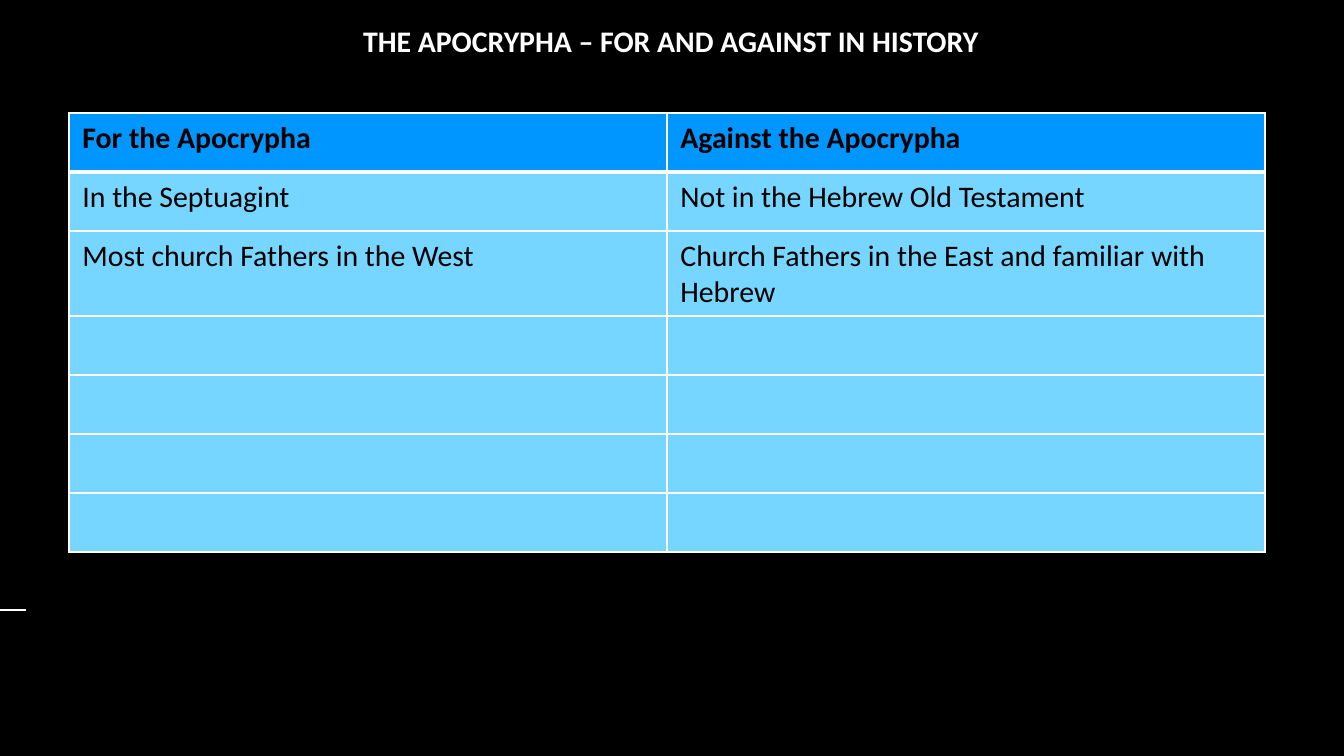
"""Build a slide with a table of historical views for and against the Apocrypha."""
from lxml import etree
from pptx import Presentation
from pptx.dml.color import RGBColor
from pptx.enum.shapes import MSO_CONNECTOR
from pptx.enum.text import PP_ALIGN
from pptx.oxml.ns import qn
from pptx.util import Pt

STRAIGHT = MSO_CONNECTOR.STRAIGHT
CENTER = PP_ALIGN.CENTER
SLIDE_WIDTH, SLIDE_HEIGHT = 1344, 756
SCALE = 9144000 / SLIDE_WIDTH
COLORS = {
    "background": "000000",
    "light": "FFFFFF",
    "dark": "000000",
    "header": "0096FF",
    "body": "76D6FF",
}
VIEWS = [
    ("For the Apocrypha", "Against the Apocrypha"),
    ("In the Septuagint", "Not in the Hebrew Old Testament"),
    ("Most church Fathers in the West",
     "Church Fathers in the East and familiar with Hebrew"),
] + [("", "")] * 4


def emu(pixels):
    return round(pixels * SCALE)


def color(name):
    return RGBColor.from_string(COLORS[name])


class SlideBuilder:
    def __init__(self, slide, font="Calibri", size=16):
        self.slide = slide
        self.font = font
        self.size = size

    def background(self, name):
        fill = self.slide.background.fill
        fill.solid()
        fill.fore_color.rgb = color(name)

    def style(self, paragraph, name, bold):
        font = paragraph.font
        font.name = self.font
        font.size = Pt(self.size)
        font.bold = bold
        font.color.rgb = color(name)

    def line(self, left, top, right, bottom, width):
        connector = self.slide.shapes.add_connector(
            STRAIGHT, *map(emu, (left, top, right, bottom)))
        connector.line.color.rgb = color("light")
        connector.line.width = Pt(width)
        etree.SubElement(connector.element.spPr, qn("a:effectLst"))

    def title(self, text, left, top, width, height):
        box = self.slide.shapes.add_textbox(*map(emu, (left, top, width, height)))
        box.text_frame.word_wrap = True
        paragraph = box.text_frame.paragraphs[0]
        paragraph.text = text
        paragraph.alignment = CENTER
        self.style(paragraph, "light", True)

    def border(self, cell, side, width):
        properties = cell._tc.get_or_add_tcPr()
        line = etree.SubElement(properties, qn(f"a:ln{side}"), w=str(Pt(width)))
        fill = etree.SubElement(line, qn("a:solidFill"))
        etree.SubElement(fill, qn("a:srgbClr"), val=COLORS["light"])

    def table(self, rows, left, top, width, row_height):
        shape = self.slide.shapes.add_table(
            len(rows), len(rows[0]),
            *map(emu, (left, top, width, row_height * len(rows))))
        for row_index, texts in enumerate(rows):
            is_header = row_index == 0
            widths = {"L": 1, "R": 1, "T": 3 if row_index == 1 else 1,
                      "B": 3 if is_header else 1}
            for column_index, text in enumerate(texts):
                cell = shape.table.cell(row_index, column_index)
                for side, line_width in widths.items():
                    self.border(cell, side, line_width)
                cell.fill.solid()
                cell.fill.fore_color.rgb = color("header" if is_header else "body")
                paragraph = cell.text_frame.paragraphs[0]
                if text:
                    paragraph.text = text
                self.style(paragraph, "dark", is_header)


def main():
    presentation = Presentation()
    presentation.slide_width = emu(SLIDE_WIDTH)
    presentation.slide_height = emu(SLIDE_HEIGHT)
    builder = SlideBuilder(presentation.slides.add_slide(presentation.slide_layouts[6]))
    builder.background("background")
    builder.line(0, 610, 26, 610, 0.75)
    builder.title("THE APOCRYPHA – FOR AND AGAINST IN HISTORY", 337, 16, 668, 46)
    builder.table(VIEWS, 69, 113, 1196, 59)
    presentation.save("out.pptx")


if __name__ == "__main__":
    main()
